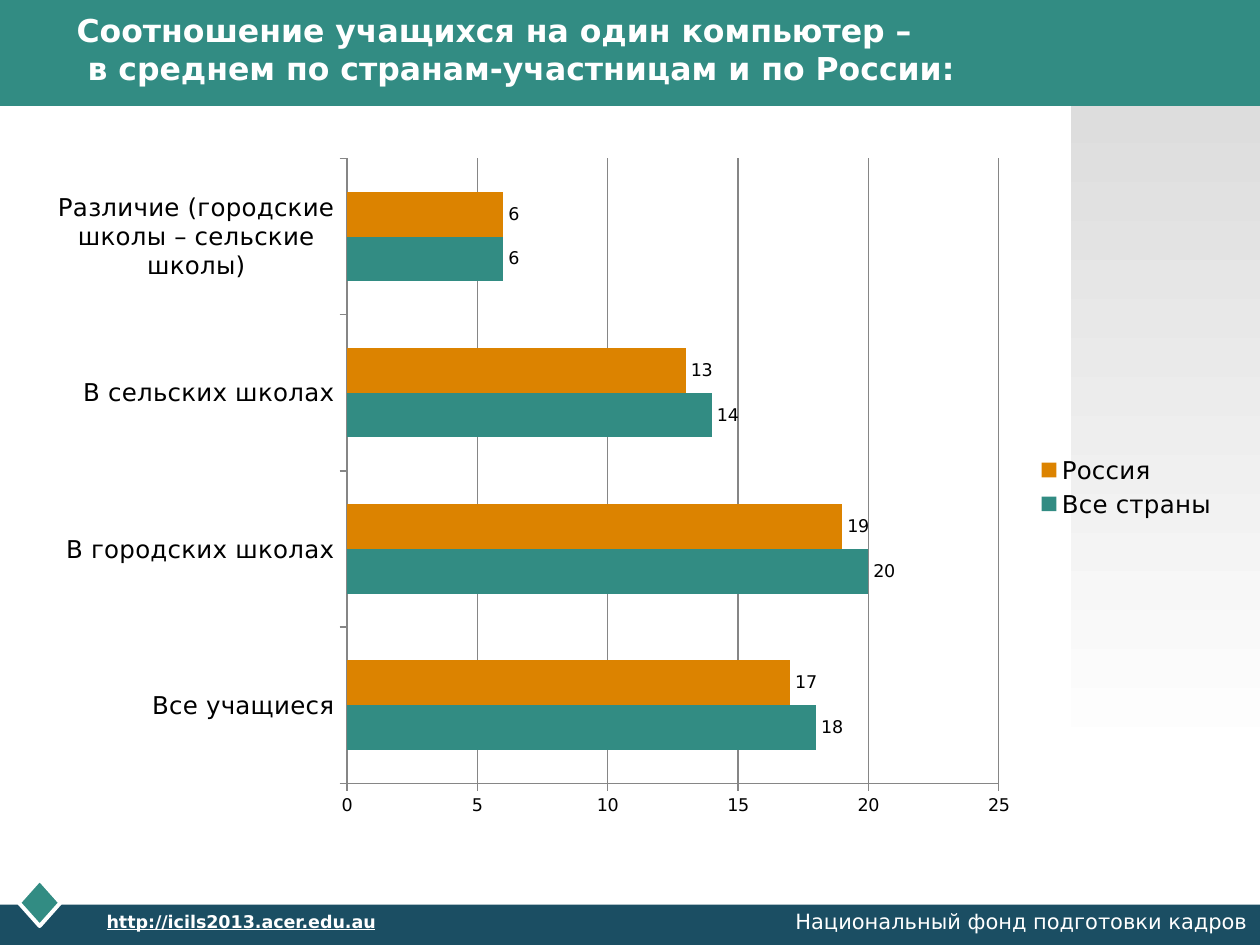
import pptx
import pptx.chart.data
import pptx.dml.color
import pptx.enum.chart
import pptx.enum.shapes
import pptx.enum.text
import pptx.util

COLS, ROWS = 100, 75
UNIT = pptx.util.Inches(0.1)
FONT = "DejaVu Sans"
HUES = {
    "teal": "328C83", "navy": "1B4E63", "gold": "DC8300", "gray": "DDDDDD",
    "white": "FFFFFF", "black": "000000", "grid": "868686",
}
KIND = pptx.enum.shapes.MSO_SHAPE
ALIGN = pptx.enum.text.PP_ALIGN
ANCHOR = pptx.enum.text.MSO_ANCHOR


def hue(name):
    return pptx.dml.color.RGBColor.from_string(HUES[name])


def place(box, left, top, wide, high):
    """Turn grid cells counted from the box's corner into slide lengths."""
    cells = (box[0] + left, box[1] + top, wide, high)
    return [round(cell * UNIT) for cell in cells]


def style(font, size, color="black", bold=False):
    font.size = pptx.util.Pt(size)
    font.name = FONT
    font.bold = bold
    font.color.rgb = hue(color)


def add_form(slide, kind, spot, color):
    form = slide.shapes.add_shape(kind, *spot)
    form.shadow.inherit = False
    form.fill.solid()
    form.fill.fore_color.rgb = hue(color)
    form.line.fill.background()
    return form


def add_text(slide, spot, lines, size, bold=False, align=ALIGN.LEFT,
             anchor=ANCHOR.TOP, under=False):
    frame = slide.shapes.add_textbox(*spot).text_frame
    frame.word_wrap = True
    frame.vertical_anchor = anchor
    para = frame.paragraphs[0]
    para.alignment = align
    for row, line in enumerate(lines):
        if row:
            para.add_line_break()
        run = para.add_run()
        run.text = line
        style(run.font, size, "white", bold)
        run.font.underline = under


def add_head(slide, box):
    add_form(slide, KIND.RECTANGLE, place(box, 0, 0, *box[2:]), "teal")
    title = ["Соотношение учащихся на один компьютер –",
             " в среднем по странам-участницам и по России:"]
    add_text(slide, place(box, 5.1, 0.8, 90, 6.2), title, 18,
             bold=True, anchor=ANCHOR.MIDDLE)


def add_side(slide, box):
    panel = add_form(slide, KIND.RECTANGLE, place(box, 0, 0, *box[2:]), "gray")
    panel.fill.gradient()
    panel.fill.gradient_angle = 270
    for stop, (spot, name) in zip(panel.fill.gradient_stops,
                                  ((0, "gray"), (1, "white"))):
        stop.position = spot
        stop.color.rgb = hue(name)


def add_foot(slide, box):
    add_form(slide, KIND.RECTANGLE, place(box, 0, 0, *box[2:]), "navy")
    gem = add_form(slide, KIND.DIAMOND, place(box, 1.5, -2, 3.3, 3.7), "teal")
    gem.line.color.rgb = hue("white")
    gem.line.width = pptx.util.Pt(2.25)
    add_text(slide, place(box, 4.1, 0, 26.7, 2.3),
             ["http://icils2013.acer.edu.au"], 10, bold=True,
             align=ALIGN.RIGHT, under=True)
    add_text(slide, place(box, 60.5, -0.2, 39.5, 2.6),
             ["Национальный фонд подготовки кадров"], 12, align=ALIGN.RIGHT)


def add_plot(slide, box):
    enum = pptx.enum.chart
    data = pptx.chart.data.CategoryChartData()
    data.categories = ["Все учащиеся", "В городских школах",
                       "В сельских школах",
                       "Различие (городские школы – сельские школы)"]
    data.add_series("Все страны", (18, 20, 14, 6))
    data.add_series("Россия", (17, 19, 13, 6))
    chart = slide.shapes.add_chart(enum.XL_CHART_TYPE.BAR_CLUSTERED,
                                   *place(box, 0, 0, *box[2:]), data).chart
    style(chart.font, 10)
    chart.has_title = False
    chart.has_legend = True
    chart.legend.position = enum.XL_LEGEND_POSITION.RIGHT
    chart.legend.include_in_layout = False
    style(chart.legend.font, 14)

    plot = chart.plots[0]
    plot.vary_by_categories = False
    plot.gap_width = 150
    plot.overlap = 0
    for bars, name in zip(plot.series, ("teal", "gold")):
        bars.format.fill.solid()
        bars.format.fill.fore_color.rgb = hue(name)
        tags = bars.data_labels
        tags.show_value = True
        tags.position = enum.XL_LABEL_POSITION.OUTSIDE_END
        style(tags.font, 10)

    names, scale = chart.category_axis, chart.value_axis
    for axis, size in ((names, 14), (scale, 10)):
        axis.major_tick_mark = enum.XL_TICK_MARK.OUTSIDE
        axis.minor_tick_mark = enum.XL_TICK_MARK.NONE
        axis.format.line.color.rgb = hue("grid")
        style(axis.tick_labels.font, size)
    names.has_major_gridlines = False
    scale.has_major_gridlines = True
    scale.major_gridlines.format.line.color.rgb = hue("grid")
    scale.minimum_scale, scale.maximum_scale = 0, 25
    scale.major_unit = 5


def main():
    deck = pptx.Presentation()
    deck.slide_width, deck.slide_height = COLS * UNIT, ROWS * UNIT
    slide = deck.slides.add_slide(deck.slide_layouts[6])
    add_side(slide, (85, 8.3, 15, 52.5))
    add_head(slide, (0, 0, COLS, 8.4))
    add_foot(slide, (0, 71.8, COLS, 3.2))
    add_plot(slide, (2.7, 11.5, 94.9, 54.3))
    deck.save("out.pptx")


if __name__ == "__main__":
    main()
